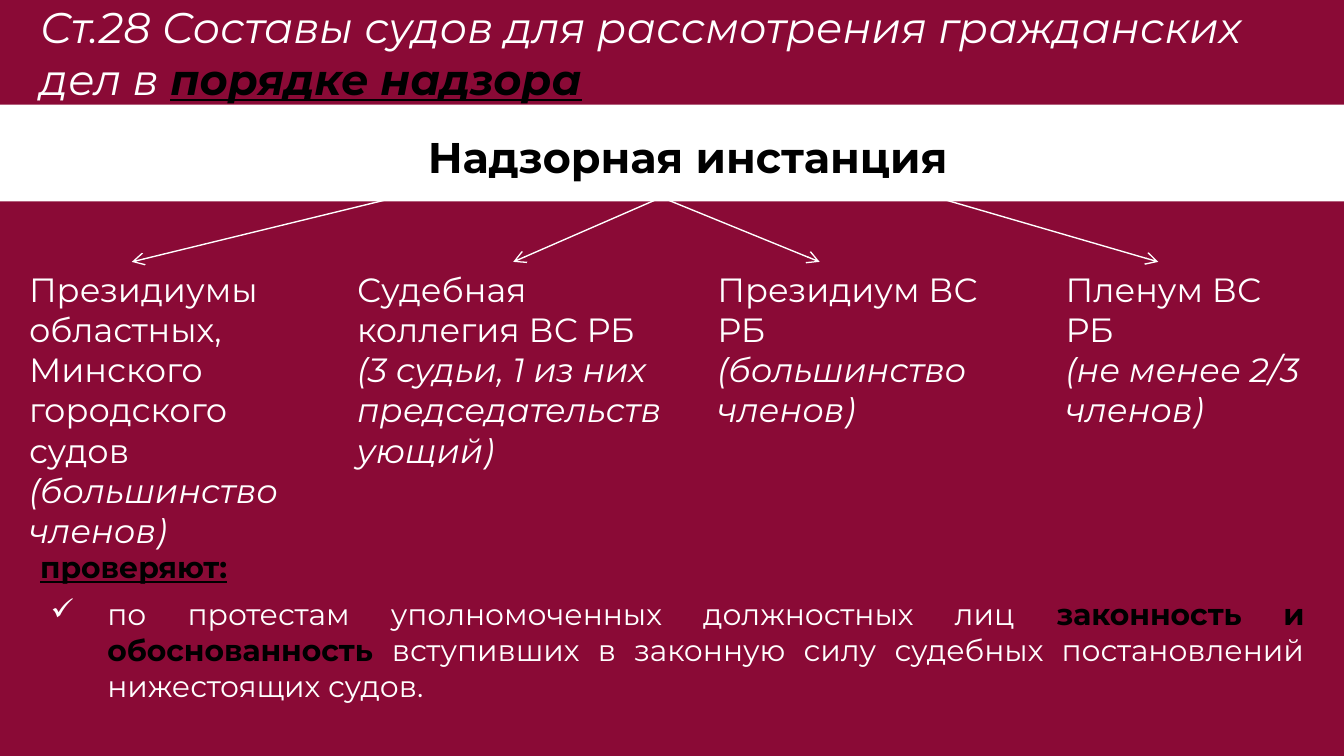
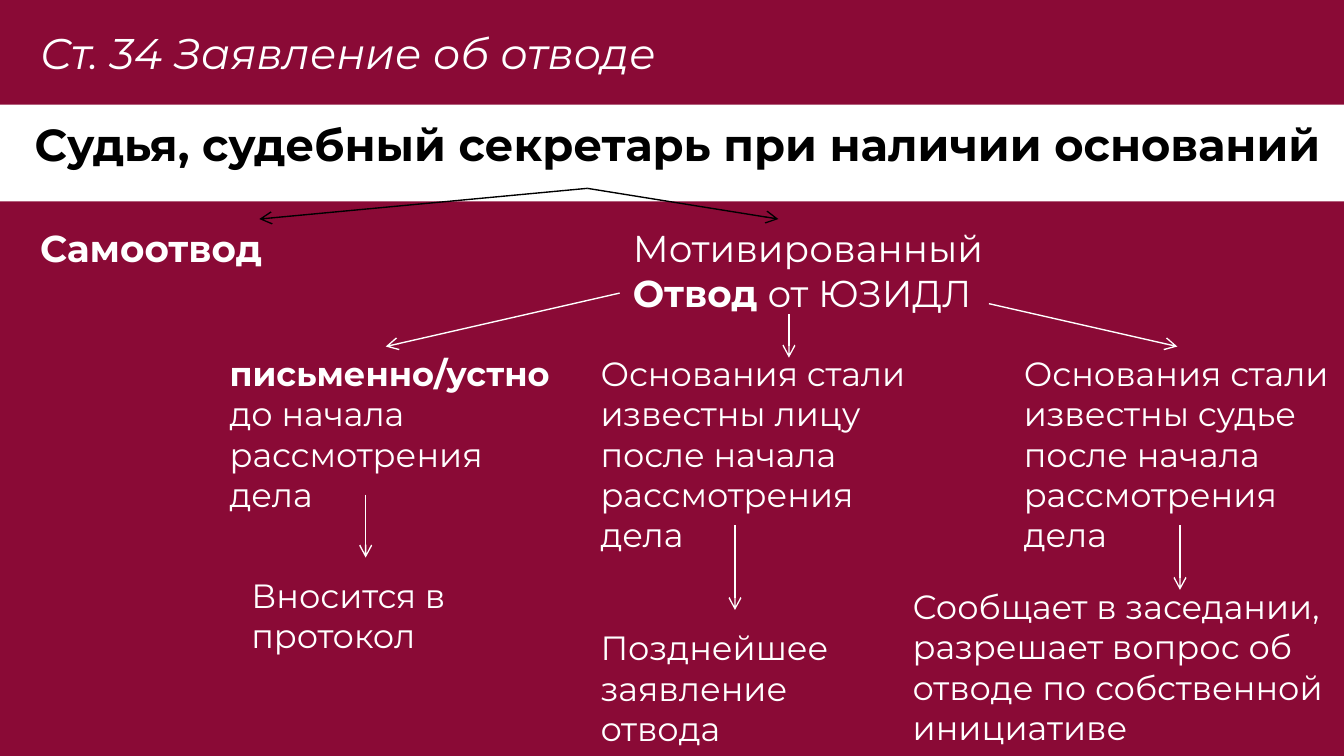
from lxml import etree
from pptx import Presentation
from pptx.dml.color import RGBColor
from pptx.enum.shapes import MSO_CONNECTOR, MSO_SHAPE
from pptx.enum.text import MSO_ANCHOR, MSO_AUTO_SIZE, PP_ALIGN
from pptx.oxml.ns import qn
from pptx.util import Cm, Pt

LINE = MSO_CONNECTOR.STRAIGHT
RECT = MSO_SHAPE.RECTANGLE
TOP, MIDDLE = MSO_ANCHOR.TOP, MSO_ANCHOR.MIDDLE
GROW, FIXED = MSO_AUTO_SIZE.SHAPE_TO_FIT_TEXT, MSO_AUTO_SIZE.NONE
LEFT, CENTER, JUSTIFY = PP_ALIGN.LEFT, PP_ALIGN.CENTER, PP_ALIGN.JUSTIFY

COLORS = {"wine": "8A0A36", "white": "FFFFFF", "black": "000000"}
FONT = "Montserrat"
WIDTH, HEIGHT = 25.4, 14.29
BAND_TOP, BAND_HEIGHT = 1.98, 1.83
PAD = 0.25


def color(name):
    return RGBColor.from_string(COLORS[name])


class Deck:
    def __init__(self):
        self.prs = Presentation()
        self.prs.slide_width, self.prs.slide_height = Cm(WIDTH), Cm(HEIGHT)
        self.slide = None

    def page(self, title, width=24.4):
        """Start a slide with its background, white band and title."""
        self.slide = self.prs.slides.add_slide(self.prs.slide_layouts[6])
        fill = self.slide.background.fill
        fill.solid()
        fill.fore_color.rgb = color("wine")
        band = self.slide.shapes.add_shape(
            RECT, 0, Cm(BAND_TOP), Cm(WIDTH), Cm(BAND_HEIGHT))
        band.shadow.inherit = False
        band.fill.solid()
        band.fill.fore_color.rgb = color("white")
        band.line.fill.background()
        self.block((0.51, 0, width, BAND_TOP), [title], 23, anchor=MIDDLE)

    def text(self, box, paras, size=18, align=LEFT):
        """Add a text box; a paragraph is a list of (text, marks) runs.

        Marks: b bold, i italic, u underlined, k black.
        """
        shape = self.slide.shapes.add_textbox(*map(Cm, box))
        frame = shape.text_frame
        frame.word_wrap = True
        frame.auto_size = GROW
        for n, runs in enumerate(paras):
            para = frame.add_paragraph() if n else frame.paragraphs[0]
            para.alignment = align
            for words, marks in runs:
                run = para.add_run()
                run.text = words
                font = run.font
                font.name, font.size = FONT, Pt(size)
                font.bold, font.italic = "b" in marks, "i" in marks
                font.underline = "u" in marks
                font.color.rgb = color("black" if "k" in marks else "white")
        return frame

    def block(self, box, paras, size, align=LEFT, anchor=TOP):
        """Add text of fixed size with equal padding on all sides."""
        frame = self.text(box, paras, size, align)
        frame.auto_size = FIXED
        frame.vertical_anchor = anchor
        frame.margin_left = frame.margin_right = Cm(PAD)
        frame.margin_top = frame.margin_bottom = Cm(PAD)
        return frame

    def indent(self, para, bullet=None):
        props = para._p.get_or_add_pPr()
        props.set("marL", str(Cm(1.27)))
        props.set("indent", str(Cm(-1.07)))
        if bullet:
            tint = etree.SubElement(props, qn("a:buClr"))
            etree.SubElement(tint, qn("a:srgbClr"), val=COLORS["white"])
            etree.SubElement(props, qn("a:buChar"), char=bullet)

    def arrow(self, x1, y1, x2, y2, tint="white"):
        line = self.slide.shapes.add_connector(LINE, *map(Cm, (x1, y1, x2, y2)))
        line.line.width = Pt(0.75)
        line.line.color.rgb = color(tint)
        etree.SubElement(line.line._get_or_add_ln(), qn("a:tailEnd"), type="arrow")
        etree.SubElement(line._element.spPr, qn("a:effectLst"))


def courts(deck):
    deck.page([("Ст.28 Составы судов для рассмотрения гражданских дел в ", "i"),
               ("порядке надзора", "biuk")])
    body = deck.block((0.51, 10.13, 24.4, 2.79), [
        [("проверяют:", "buk")],
        [("по протестам уполномоченных должностных лиц ", ""),
         ("законность и обоснованность ", "bk"),
         ("вступивших в законную силу судебных постановлений "
          "нижестоящих судов.", "")],
    ], 16, JUSTIFY)
    item = body.paragraphs[1]
    item.space_before = Pt(6)
    deck.indent(item, "✓")
    deck.text((1.5, 2.34, 23.01, 1.24), [[("Надзорная инстанция", "bk")]], 23, CENTER)

    top = 4.95
    columns = [
        (0.3, 5.99, 5.64, ["Президиумы областных,", "Минского городского судов"],
         "(большинство членов)"),
        (6.5, 6.4, 4.11, ["Судебная коллегия ВС РБ"],
         "(3 судьи, 1 из них председательствующий)"),
        (13.31, 5.79, 3.33, ["Президиум ВС РБ"], "(большинство членов)"),
        (19.89, 5, 3.33, ["Пленум ВС РБ"], "(не менее 2/3 членов)"),
    ]
    for left, width, height, names, quorum in columns:
        paras = [[(name, "")] for name in names] + [[(quorum, "i")]]
        deck.text((left, top, width, height), paras)
    for start, end in [(7.49, 2.49), (12.5, 9.7), (12.5, 15.49), (17.7, 21.89)]:
        deck.arrow(start, 3.73, end, top)


def recusal(deck):
    deck.page([("Ст. 34 Заявление об отводе", "i")], 22.1)
    head = deck.block((0, 1.96, WIDTH, 1.55), [
        [("Судья, судебный секретарь при наличии оснований", "bk")]], 24, CENTER)
    deck.indent(head.paragraphs[0])

    deck.text((0.51, 4.14, 4.8, 1.12), [[("Самоотвод", "b")]], 20)
    deck.text((11.71, 4.14, 7.39, 1.96), [
        [("Мотивированный ", ""), ("Отвод", "b"), (" от ЮЗИДЛ", "")]], 20)
    deck.text((4.09, 6.55, 6.81, 3.33), [
        [("письменно/устно", "b"), (" до начала рассмотрения дела", "")]])

    for left, width, who in [(11.1, 6.4, "лицу"), (19.1, 6.3, "судье")]:
        deck.text((left, 6.55, width, 4.11), [
            [(f"Основания стали известны {who} после начала рассмотрения дела", "")]])

    results = [
        ((4.5, 10.74, 4.6, 1.8), "Вносится в протокол"),
        ((11.1, 11.73, 5, 2.57), "Позднейшее заявление отвода"),
        ((17, 10.95, 8.4, 3.33), "Сообщает в заседании, разрешает вопрос "
                                 "об отводе по собственной инициативе"),
    ]
    for box, words in results:
        deck.text(box, [[(words, "")]])

    for ends in [(11.71, 5.54, 7.29, 6.55), (18.69, 5.74, 22.25, 6.55)]:
        deck.arrow(*ends)
    for x, start, end in [(14.91, 5.94, 6.76), (6.91, 9.35, 10.54),
                          (13.89, 9.93, 11.53), (22.3, 9.93, 11.15)]:
        deck.arrow(x, start, x, end)
    for end in (4.9, 14.71):
        deck.arrow(11.1, 3.56, end, 4.14, "black")


def main():
    deck = Deck()
    courts(deck)
    recusal(deck)
    deck.prs.save("out.pptx")


if __name__ == "__main__":
    main()
